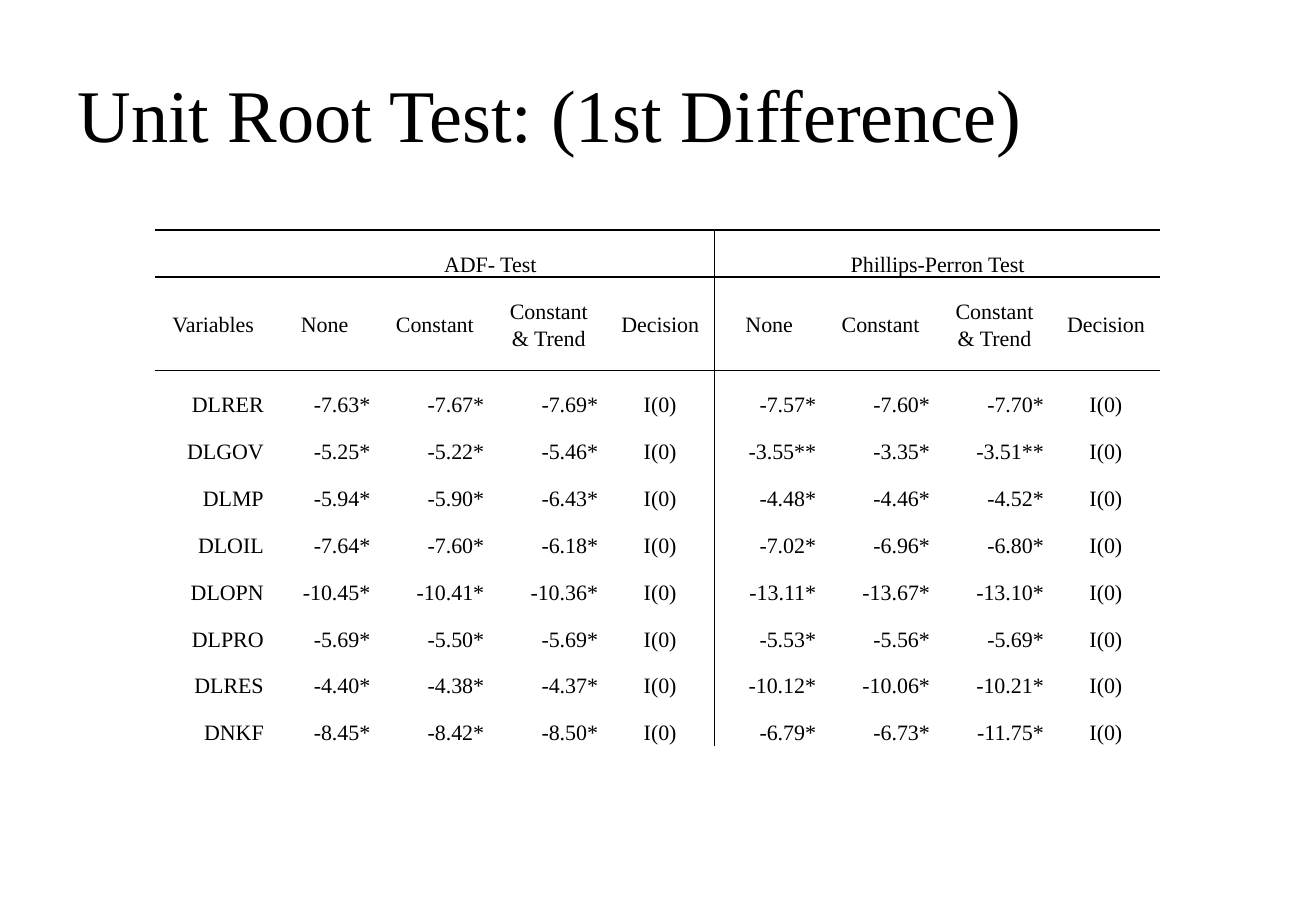
from lxml import etree
from pptx import Presentation
from pptx import util as u
from pptx.dml.color import RGBColor
from pptx.enum import text as t
from pptx.oxml import ns

# Content
TITLE = "Unit Root Test: (1st Difference)"
TESTS = ["ADF- Test ", "Phillips-Perron Test"]
MODELS = ["None", "Constant", "Constant & Trend", "Decision"]
DECISION = "I(0)"
STATISTICS = [
    ("DLRER", ("-7.63*", "-7.67*", "-7.69*"), ("-7.57*", "-7.60*", "-7.70*")),
    ("DLGOV", ("-5.25*", "-5.22*", "-5.46*"), ("-3.55**", "-3.35*", "-3.51**")),
    ("DLMP", ("-5.94*", "-5.90*", "-6.43*"), ("-4.48*", "-4.46*", "-4.52*")),
    ("DLOIL", ("-7.64*", "-7.60*", "-6.18*"), ("-7.02*", "-6.96*", "-6.80*")),
    ("DLOPN", ("-10.45*", "-10.41*", "-10.36*"), ("-13.11*", "-13.67*", "-13.10*")),
    ("DLPRO", ("-5.69*", "-5.50*", "-5.69*"), ("-5.53*", "-5.56*", "-5.69*")),
    ("DLRES", ("-4.40*", "-4.38*", "-4.37*"), ("-10.12*", "-10.06*", "-10.21*")),
    ("DNKF", ("-8.45*", "-8.42*", "-8.50*"), ("-6.79*", "-6.73*", "-11.75*")),
]

# Look and measures (cm)
FONT, INK = "Times New Roman", "000000"
COLUMNS = [2.43, 2.23, 2.38, 2.38, 2.28, 2.28, 2.38, 2.38, 2.28]
ROW, HEADER_ROW = 0.98, 1.96
DECISION_COLUMNS = (4, 8)
DIVIDER = 5  # first column of the second test


def color(value):
    return RGBColor.from_string(value)


def style(paragraph, size, align, spacing=None):
    paragraph.alignment = align
    paragraph.line_spacing = spacing
    for run in paragraph.runs:
        run.font.name, run.font.size = FONT, u.Pt(size)
        run.font.color.rgb = color(INK)


def set_borders(cell, drawn):
    properties = cell._tc.get_or_add_tcPr()
    for side in "LRTB":
        line = etree.SubElement(properties, ns.qn(f"a:ln{side}"), w=str(u.Pt(1)))
        if side in drawn:
            fill = etree.SubElement(line, ns.qn("a:solidFill"))
            etree.SubElement(fill, ns.qn("a:srgbClr"), val=INK)
        else:
            etree.SubElement(line, ns.qn("a:noFill"))


def borders_at(row, column):
    sides = {"T"} if row <= 2 else set()
    if row <= 1:
        sides.add("B")
    if column == DIVIDER:
        sides.add("L")
    if column == DIVIDER - 1 or (row == 0 and column == 1):
        sides.add("R")
    return sides


def main():
    deck = Presentation()
    deck.slide_width, deck.slide_height = u.Cm(27.51), u.Cm(19.05)
    slide = deck.slides.add_slide(deck.slide_layouts[6])

    # Title
    title = slide.shapes.add_textbox(
        u.Cm(1.37), u.Cm(0.76), u.Cm(24.77), u.Cm(3.18)).text_frame
    title.word_wrap = True
    title.vertical_anchor = t.MSO_ANCHOR.MIDDLE
    title.text = TITLE
    style(title.paragraphs[0], 44, t.PP_ALIGN.LEFT)

    # Rows of the table
    rows = [["", TESTS[0], "", "", "", TESTS[1], "", "", ""],
            ["Variables", *MODELS, *MODELS]]
    for variable, adf, phillips_perron in STATISTICS:
        rows.append([variable, *adf, DECISION, *phillips_perron, DECISION])
    heights = [HEADER_ROW if r == 1 else ROW for r in range(len(rows))]

    results = slide.shapes.add_table(
        len(rows), len(COLUMNS), u.Cm(3.24), u.Cm(4.81),
        u.Cm(sum(COLUMNS)), u.Cm(sum(heights))).table
    results.first_row = results.horz_banding = False
    for column, width in zip(results.columns, COLUMNS):
        column.width = u.Cm(width)
    for row, height in zip(results.rows, heights):
        row.height = u.Cm(height)
    for first in (1, DIVIDER):
        results.cell(0, first).merge(results.cell(0, first + 3))

    # Cells
    for r, row in enumerate(rows):
        for c, value in enumerate(row):
            cell = results.cell(r, c)
            cell.margin_left = cell.margin_right = u.Cm(0.16)
            cell.margin_top = cell.margin_bottom = 0
            cell.vertical_anchor = (
                t.MSO_ANCHOR.MIDDLE if r == 1 else t.MSO_ANCHOR.BOTTOM)
            set_borders(cell, borders_at(r, c))
            cell.fill.background()
            centred = r <= 1 or c in DECISION_COLUMNS
            cell.text_frame.text = value
            style(cell.text_frame.paragraphs[0], 13,
                  t.PP_ALIGN.CENTER if centred else t.PP_ALIGN.RIGHT, 1.15)

    deck.save("out.pptx")


if __name__ == "__main__":
    main()
